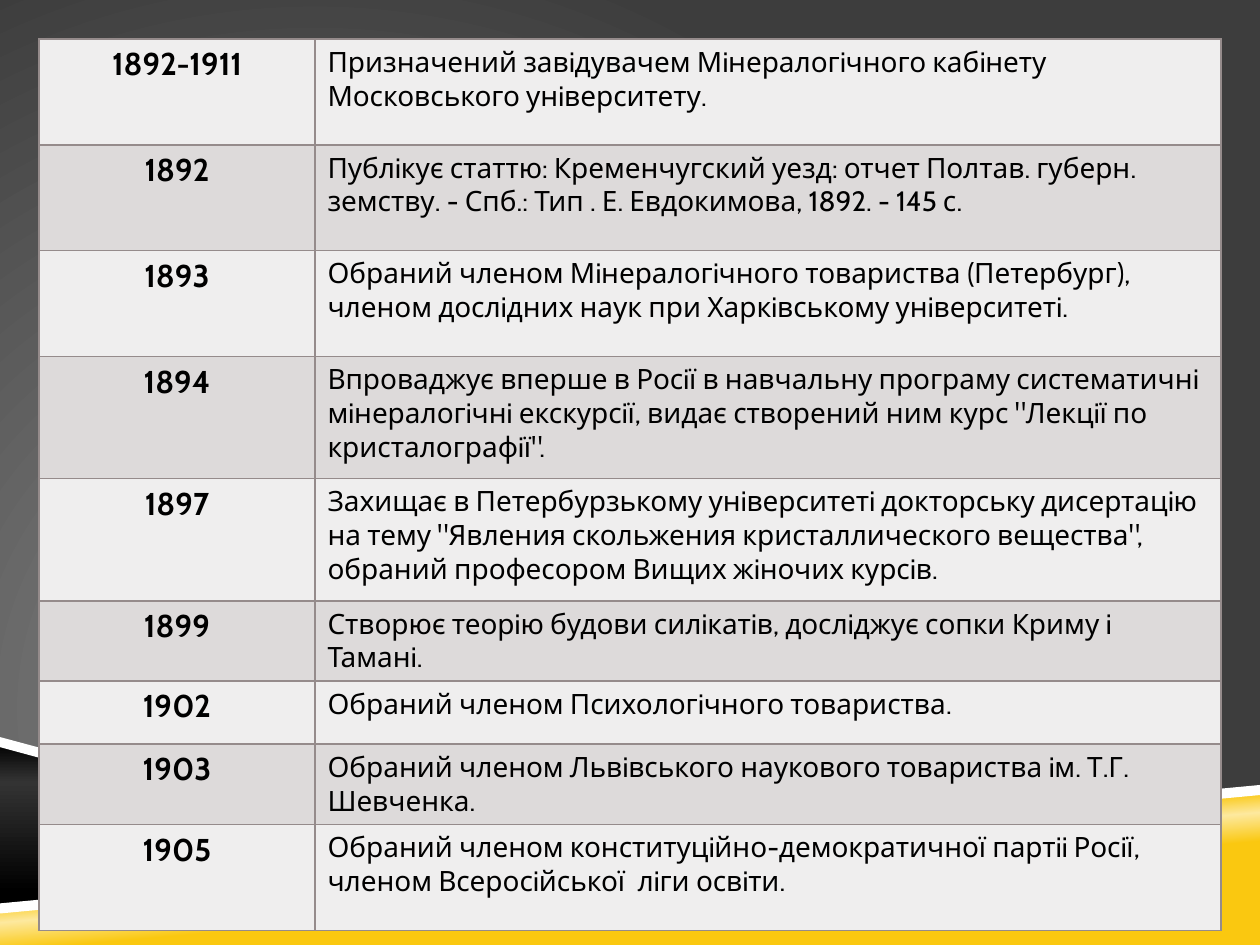
from lxml import etree
from pptx import Presentation
from pptx.dml.color import RGBColor
from pptx.enum.text import PP_ALIGN
from pptx.oxml.ns import qn
from pptx.util import Inches, Pt

CENTER, LEFT = PP_ALIGN.CENTER, PP_ALIGN.LEFT
FONT = "Cabin"
BANDS = ("EFEEEE", "DDDADA")
BORDER = "958B8B"


def color(value):
    return RGBColor.from_string(value)


def set_gradient(fill, element, stops, angle=None):
    """Fill with (percent, colour) stops: linear at an angle, else circular."""
    fill.gradient()
    grad = element.find(".//" + qn("a:gradFill"))
    for child in list(grad):
        grad.remove(child)
    gs_list = etree.SubElement(grad, qn("a:gsLst"))
    for percent, value in stops:
        gs = etree.SubElement(gs_list, qn("a:gs"), pos=str(percent * 1000))
        etree.SubElement(gs, qn("a:srgbClr"), val=value)
    if angle is None:
        circle = etree.SubElement(grad, qn("a:path"), path="circle")
        etree.SubElement(circle, qn("a:fillToRect"),
                         l="50000", t="100000", r="100000", b="50000")
    else:
        etree.SubElement(grad, qn("a:lin"), ang=str(angle * 60000), scaled="0")


prs = Presentation()
prs.slide_width, prs.slide_height = Inches(10), Inches(7.5)
s = prs.slides.add_slide(prs.slide_layouts[6])

# Background
set_gradient(s.background.fill, s._element, [(0, "878787"), (100, "3D3D3D")])

# Bottom wedges and white stripes: corner points, then gradient or plain fill
yellow = [(39, "FAC810"), (50, "FDE99F"), (58, "FAC810")]
black = [(0, "000000"), (24, "333333"), (90, "000000")]
wedges = [
    ([(0, 7.21), (10, 6.27), (10, 7.5), (0, 7.5)], yellow, 265),
    ([(0, 5.89), (3.59, 6.85), (0, 7.21)], black, 90),
    ([(10, 6.23), (0, 7.17), (0, 7.25), (10, 6.31)], "FFFFFF", None),
    ([(0, 5.85), (0, 5.93), (3.5, 6.88), (3.75, 6.86)], "FFFFFF", None),
]
for corners, paint, angle in wedges:
    points = [(Inches(x), Inches(y)) for x, y in corners]
    builder = s.shapes.build_freeform(*points[0], scale=1.0)
    builder.add_line_segments(points[1:], close=True)
    sp = builder.convert_to_shape()
    sp.shadow.inherit = False
    sp.line.fill.background()
    if angle is None:
        sp.fill.solid()
        sp.fill.fore_color.rgb = color(paint)
    else:
        set_gradient(sp.fill, sp._element, paint, angle)

# Chronology: year, row height, event
events = [
    ("1892-1911", 0.84, "Призначений завiдувачем Мiнералогiчного кабiнету Московського унiверситету."),
    ("1892", 0.84, "Публiкує статтю: Кременчугский уезд: отчет Полтав. губерн. земству. - Спб.: "
                   "Тип . Е. Евдокимова, 1892. - 145 с."),
    ("1893", 0.84, "Обраний членом Мiнералогiчного товариства (Петербург), членом дослiдних наук "
                   "при Харкiвському унiверситетi."),
    ("1894", 0.97, "Впроваджує вперше в Росiї в навчальну програму систематичнi мiнералогiчнi "
                   "екскурсiї, видає створений ним курс \"Лекцiї по кристалографiї\"."),
    ("1897", 0.97, "Захищає в Петербурзькому унiверситетi докторську дисертацiю на тему \"Явления "
                   "скольжения кристаллического вещества\", обраний професором Вищих жiночих курсiв."),
    ("1899", 0.5, "Створює теорiю будови силiкатiв, дослiджує сопки Криму i Таманi."),
    ("1902", 0.5, "Обраний членом Психологiчного товариства."),
    ("1903", 0.5, "Обраний членом Львiвського наукового товариства iм. Т.Г. Шевченка."),
    ("1905", 0.84, "Обраний членом конституцiйно-демократичної партii Росiї, членом "
                   "Всеросiйської  лiги освiти."),
]
table = s.shapes.add_table(len(events), 2, Inches(0.31), Inches(0.31),
                           Inches(9.38), Inches(6.8)).table
table.first_row = table.horz_banding = False
table.columns[0].width, table.columns[1].width = Inches(2.19), Inches(7.19)

for i, (year, height, event) in enumerate(events):
    table.rows[i].height = Inches(height)
    for j, (text, size, align) in enumerate([(year, 18, CENTER), (event, 16, LEFT)]):
        cell = table.cell(i, j)
        cell.fill.solid()
        cell.fill.fore_color.rgb = color(BANDS[i % 2])
        p = cell.text_frame.paragraphs[0]
        p.text = text
        p.alignment = align
        p.font.name = FONT
        p.font.size = Pt(size)
        p.font.bold = j == 0
        p.font.color.rgb = color("000000")
        # Borders come before the fill in the cell properties
        tc_pr = cell._tc.get_or_add_tcPr()
        for k, side in enumerate(("a:lnL", "a:lnR", "a:lnT", "a:lnB")):
            ln = etree.Element(qn(side), w=str(Pt(1)))
            solid = etree.SubElement(ln, qn("a:solidFill"))
            etree.SubElement(solid, qn("a:srgbClr"), val=BORDER)
            tc_pr.insert(k, ln)

prs.save("out.pptx")
